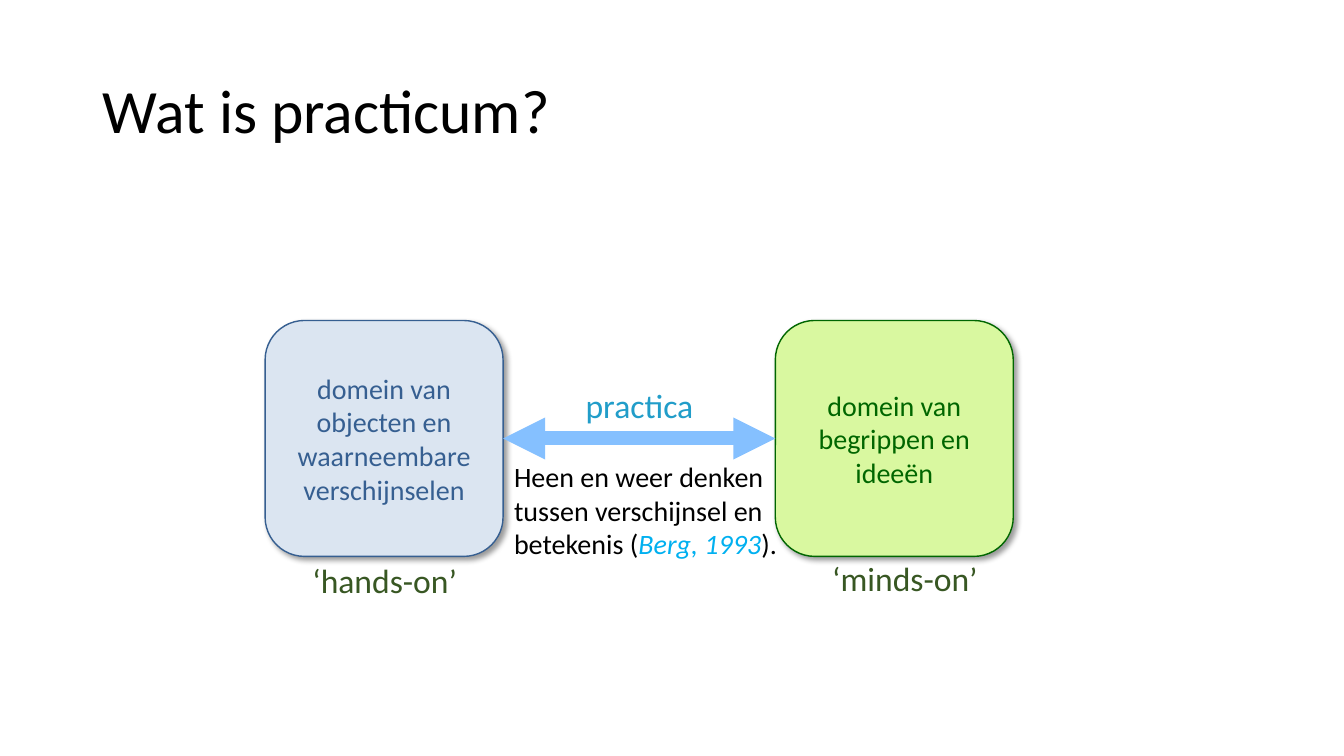
from lxml import etree
from pptx import Presentation
from pptx.dml.color import RGBColor
from pptx.enum import shapes, text
from pptx.oxml import parse_xml
from pptx.oxml.ns import nsdecls, qn
from pptx.util import Inches, Pt

DOMAIN_WIDTH, DOMAIN_HEIGHT = 2.36, 2.34
DOMAIN_TOP = 3.18
HANDS_LEFT, MINDS_LEFT = 2.63, 7.69
SHADOW = (
    f'<a:effectLst {nsdecls("a")}><a:outerShdw blurRad="50800" dist="38100" dir="2700000" '
    'algn="tl" rotWithShape="0"><a:srgbClr val="000000"><a:alpha val="40000"/>'
    '</a:srgbClr></a:outerShdw></a:effectLst>'
)


def rgb(hex_colour):
    """Turn a hex string into a colour."""
    return RGBColor.from_string(hex_colour)


def style(run, size, colour, italic=False):
    """Format one run."""
    run.font.name = "Calibri"
    run.font.size = Pt(size)
    run.font.color.rgb = rgb(colour)
    run.font.italic = italic


def add_title(slide, box, wording):
    """Place and format the slide title."""
    title = slide.shapes.title
    title.left, title.top, title.width, title.height = map(Inches, box)
    title.text_frame.text = wording
    title.text_frame.vertical_anchor = text.MSO_ANCHOR.MIDDLE
    heading = title.text_frame.paragraphs[0]
    heading.alignment = text.PP_ALIGN.LEFT
    heading.line_spacing = 0.9
    style(heading.runs[0], 44, "000000")


def add_domain(slide, box, wording, fill, ink):
    """Draw a rounded domain box with a soft shadow."""
    domain = slide.shapes.add_shape(
        shapes.MSO_SHAPE.ROUNDED_RECTANGLE, *map(Inches, box))
    domain.fill.solid()
    domain.fill.fore_color.rgb = rgb(fill)
    domain.line.color.rgb = rgb(ink)
    domain.line.width = Pt(1)
    domain._element.spPr.append(parse_xml(SHADOW))
    domain.text_frame.text = wording
    domain.text_frame.word_wrap = True
    domain.text_frame.vertical_anchor = text.MSO_ANCHOR.MIDDLE
    phrase = domain.text_frame.paragraphs[0]
    phrase.alignment = text.PP_ALIGN.CENTER
    style(phrase.runs[0], 20, ink)
    return domain


def add_exchange(slide, hands, minds):
    """Join the two domains with a thick double arrow."""
    middle = hands.top + hands.height // 2
    exchange = slide.shapes.add_connector(
        shapes.MSO_CONNECTOR.STRAIGHT, hands.left + hands.width, middle, minds.left, middle)
    exchange.begin_connect(hands, 3)
    exchange.end_connect(minds, 1)
    exchange.line.color.rgb = rgb("85C0FF")
    exchange.line.width = Pt(10)
    outline = exchange.line._get_or_add_ln()
    for end in ("a:headEnd", "a:tailEnd"):
        etree.SubElement(outline, qn(end), type="triangle")
    etree.SubElement(exchange._element.spPr, qn("a:effectLst"))


def add_label(slide, box, pieces, size, spaced=False, centred=False):
    """Write a label made of (wording, colour, italic) pieces."""
    label = slide.shapes.add_textbox(*map(Inches, box))
    label.text_frame.word_wrap = True
    line = label.text_frame.paragraphs[0]
    line.alignment = text.PP_ALIGN.CENTER if centred else text.PP_ALIGN.LEFT
    if spaced:
        line.line_spacing = 0.9
        line.space_before = line.space_after = Pt(6)
    for wording, colour, italic in pieces:
        run = line.add_run()
        run.text = wording
        style(run, size, colour, italic)


def add_diagram(slide, left, top):
    """Draw both domains, the arrow between them and their labels."""
    minds_left = left + MINDS_LEFT - HANDS_LEFT
    gap_left = left + DOMAIN_WIDTH
    bottom = top + DOMAIN_HEIGHT
    hands = add_domain(slide, (left, top, DOMAIN_WIDTH, DOMAIN_HEIGHT),
                       "domein van objecten en waarneembare verschijnselen",
                       "DBE5F1", "365F91")
    minds = add_domain(slide, (minds_left, top, DOMAIN_WIDTH, DOMAIN_HEIGHT),
                       "domein van begrippen en ideeën", "D9F8A0", "006600")
    add_exchange(slide, hands, minds)
    add_label(slide, (gap_left + 0.72, top + 0.63, 2.72, 0.62),
              [("practica", "219DC9", False)], 24, spaced=True)
    add_label(slide, (minds_left + 0.21, bottom + 0.01, 2.15, 0.94),
              [("‘minds-on’", "385723", False)], 24, spaced=True, centred=True)
    add_label(slide, (left + 0.37, bottom - 0.01, 2.25, 0.51),
              [("‘hands-on’", "385723", False)], 24)
    add_label(slide, (gap_left + 0.01, top + 1.33, 2.94, 1.11),
              [("Heen en weer denken tussen verschijnsel en betekenis (", "000000", False),
               ("Berg, 1993", "00B0F0", True),
               (").", "000000", False)], 20)


def main():
    """Build and save the slide."""
    deck = Presentation()
    deck.slide_width, deck.slide_height = Inches(13.33), Inches(7.5)
    slide = deck.slides.add_slide(deck.slide_layouts[5])
    add_title(slide, (0.92, 0.4, 11.5, 1.45), "Wat is practicum?")
    add_diagram(slide, HANDS_LEFT, DOMAIN_TOP)
    deck.save("out.pptx")


if __name__ == "__main__":
    main()
